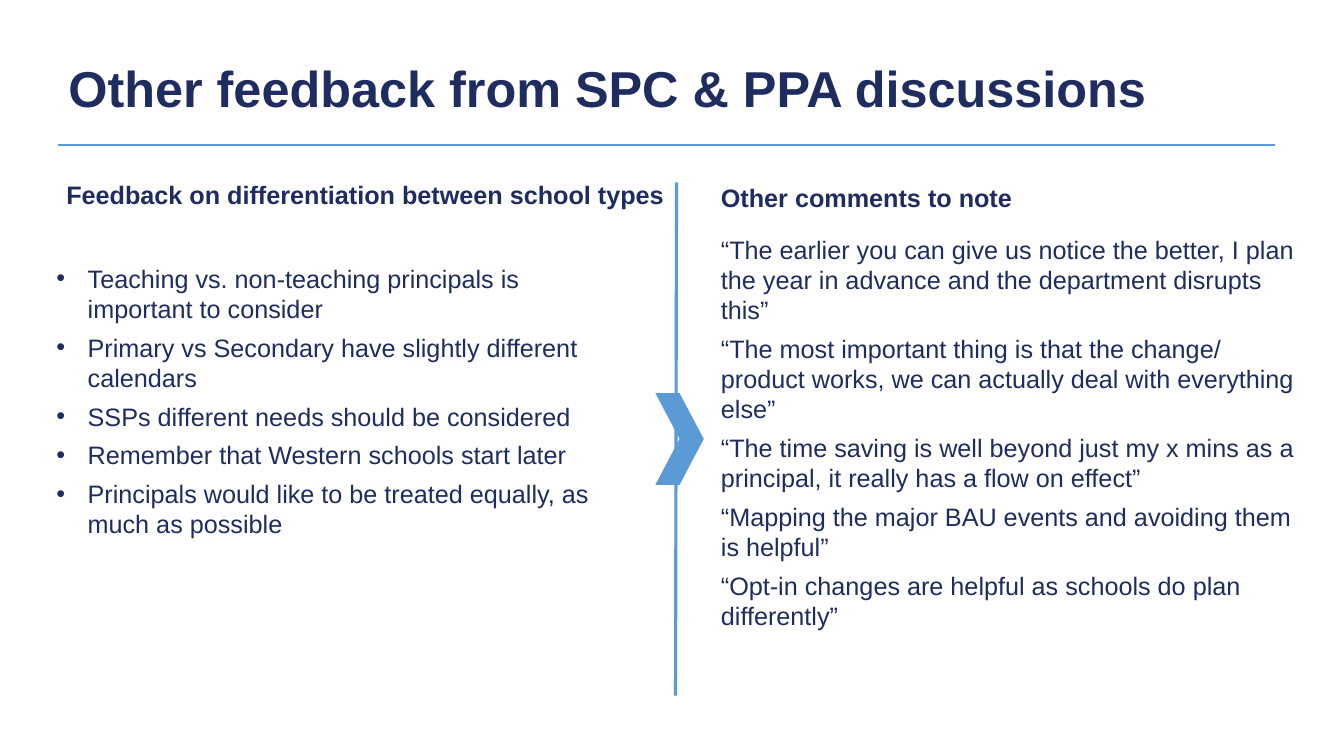
import pptx
import pptx.util
import pptx.dml.color
import pptx.enum.shapes
import pptx.enum.text
import lxml.etree
from pptx.util import Inches

TITLE = "Other feedback from SPC & PPA discussions"
SCHOOL_TYPES_HEADING = "Feedback on differentiation between school types"
SCHOOL_TYPES = [
    "Teaching vs. non-teaching principals is important to consider",
    "Primary vs Secondary have slightly different calendars",
    "SSPs different needs should be considered",
    "Remember that Western schools start later",
    "Principals would like to be treated equally, as much as possible",
]
COMMENTS_HEADING = "Other comments to note"
COMMENTS = [
    "“The earlier you can give us notice the better, I plan the year in advance and the department disrupts this”",
    "“The most important thing is that the change/ product works, we can actually deal with everything else”",
    "“The time saving is well beyond just my x mins as a principal, it really has a flow on effect”",
    "“Mapping the major BAU events and avoiding them is helpful”",
    "“Opt-in changes are helpful as schools do plan differently”",
]
THEME = {
    "font": "Arial",
    "ink": pptx.dml.color.RGBColor.from_string("1F2C5F"),
    "accent": pptx.dml.color.RGBColor.from_string("5B9BD5"),
    "title": 36,
    "body": 18,
    "gap": 6,
    "indent": 0.31,
}
LEFT, RIGHT = 0.56, 7.15
BODY_HEIGHT = 4.29

deck = pptx.Presentation()
deck.slide_width, deck.slide_height = Inches(13.33), Inches(7.5)
slide = deck.slides.add_slide(deck.slide_layouts[6])


def add_text(lines, left, top, width, height, size=THEME["body"], bold=False,
             gap=0, inset=True, bullet=False, line_spacing=None, middle=False):
    frame = slide.shapes.add_textbox(
        Inches(left), Inches(top), Inches(width), Inches(height)).text_frame
    frame.word_wrap = True
    if middle:
        frame.vertical_anchor = pptx.enum.text.MSO_ANCHOR.MIDDLE
    if not inset:
        frame.margin_left = frame.margin_top = 0
        frame.margin_right = frame.margin_bottom = 0
    for index, line in enumerate(lines):
        paragraph = frame.add_paragraph() if index else frame.paragraphs[0]
        paragraph.space_before = pptx.util.Pt(gap)
        if line_spacing:
            paragraph.line_spacing = line_spacing
        if bullet:
            properties = paragraph._p.get_or_add_pPr()
            properties.set("marL", str(Inches(THEME["indent"])))
            properties.set("indent", str(-Inches(THEME["indent"])))
            for tag, key, value in (("a:buFont", "typeface", THEME["font"]),
                                    ("a:buChar", "char", "•")):
                lxml.etree.SubElement(properties, pptx.oxml.ns.qn(tag)).set(key, value)
        run = paragraph.add_run()
        run.text = line
        run.font.name = THEME["font"]
        run.font.size = pptx.util.Pt(size)
        run.font.bold = bold
        run.font.color.rgb = THEME["ink"]


def add_rule(start, end, weight):
    rule = slide.shapes.add_connector(
        pptx.enum.shapes.MSO_CONNECTOR.STRAIGHT,
        *(Inches(length) for length in start + end))
    rule.line.color.rgb = THEME["accent"]
    rule.line.width = pptx.util.Pt(weight)
    lxml.etree.SubElement(rule._element.spPr, pptx.oxml.ns.qn("a:effectLst"))


add_rule((0.58, 1.44), (12.65, 1.44), 1)
add_text([TITLE], 0.58, 0.39, 11.41, 1.03, size=THEME["title"], bold=True,
         line_spacing=0.9, middle=True)

add_text(SCHOOL_TYPES, LEFT, 2.61, 5.55, BODY_HEIGHT,
         gap=THEME["gap"], inset=False, bullet=True)
add_text([COMMENTS_HEADING], RIGHT, 1.81, 5.08, 0.3, bold=True,
         gap=THEME["gap"], inset=False)
add_text(COMMENTS, RIGHT, 2.32, 5.79, BODY_HEIGHT, gap=THEME["gap"], inset=False)

add_rule((6.71, 1.81), (6.7, 6.9), 2.25)
chevron = slide.shapes.add_shape(
    pptx.enum.shapes.MSO_SHAPE.CHEVRON,
    Inches(6.5), Inches(3.9), Inches(0.48), Inches(0.91))
chevron.shadow.inherit = False
chevron.fill.solid()
chevron.fill.fore_color.rgb = THEME["accent"]
chevron.line.fill.background()

add_text([SCHOOL_TYPES_HEADING], LEFT, 1.73, 6.37, 0.4, bold=True)

deck.save("out.pptx")
